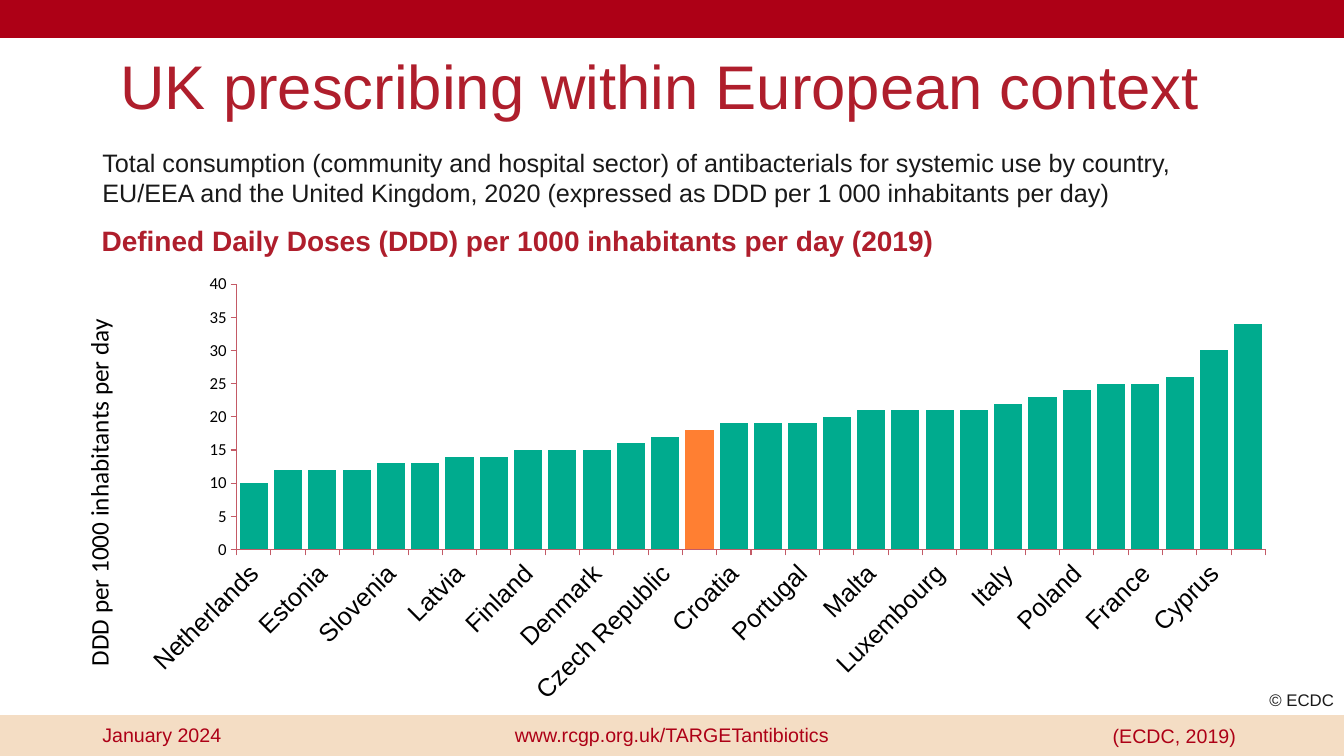
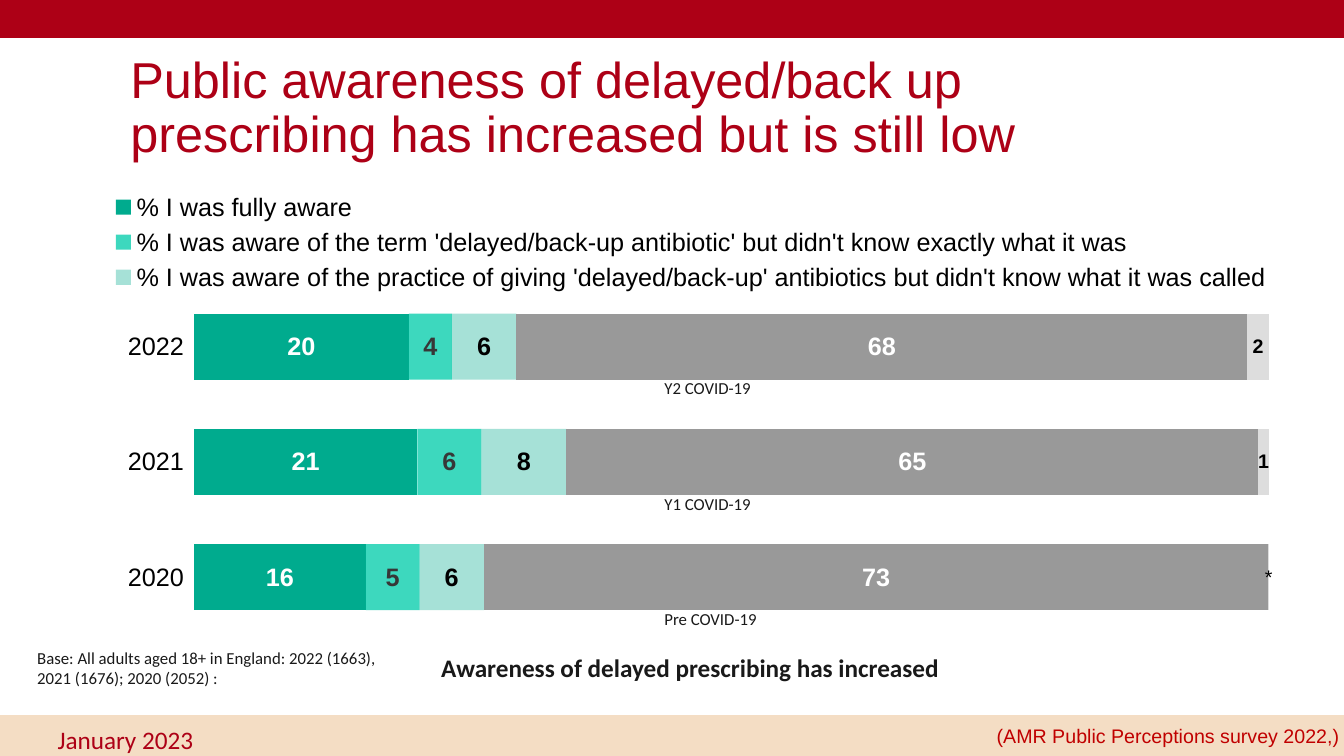
from pptx import Presentation
from pptx.chart.data import CategoryChartData
from pptx.dml.color import RGBColor
from pptx.enum.chart import XL_CHART_TYPE, XL_LABEL_POSITION, XL_LEGEND_POSITION, XL_TICK_MARK
from pptx.enum.shapes import MSO_SHAPE
from pptx.enum.text import MSO_ANCHOR, PP_ALIGN
from pptx.oxml import parse_xml
from pptx.oxml.ns import nsdecls
from pptx.util import Pt

COLUMN, STACKED = XL_CHART_TYPE.COLUMN_CLUSTERED, XL_CHART_TYPE.BAR_STACKED_100
INSIDE, ABOVE, OUT = XL_LABEL_POSITION.CENTER, XL_LEGEND_POSITION.TOP, XL_TICK_MARK.OUTSIDE
MID, TOP, LOW = MSO_ANCHOR.MIDDLE, MSO_ANCHOR.TOP, MSO_ANCHOR.BOTTOM
LEFT, CENTER, RIGHT = PP_ALIGN.LEFT, PP_ALIGN.CENTER, PP_ALIGN.RIGHT
RECT = MSO_SHAPE.RECTANGLE
RED, ROSE, SAND, INK, BLACK = "AD0016", "AF1E2C", "F4DDC4", "191919", "000000"
TEAL, ORANGE, AXIS = "00AB8E", "FF7F32", "C45A66"


def paint(target, color):
    if hasattr(target, "solid"):
        target.solid()
        target.fore_color.rgb = RGBColor.from_string(color)
    else:
        target.color.rgb = RGBColor.from_string(color)


def write(slide, text, spot, size, color, face="Arial", bold=False,
          align=LEFT, anchor=TOP, space=1.0):
    frame = slide.shapes.add_textbox(*map(Pt, spot)).text_frame
    frame.word_wrap = True
    frame.vertical_anchor = anchor
    par = frame.paragraphs[0]
    par.alignment = align
    par.line_spacing = space
    run = par.add_run()
    run.text = text
    run.font.name, run.font.size, run.font.bold = face, Pt(size), bold
    paint(run.font, color)


deck = Presentation()
deck.slide_width, deck.slide_height = Pt(960), Pt(540)
heads = [
    ("UK prescribing within European context", (79, 26.5, 842, 75), 44, ROSE),
    ("Public awareness of delayed/back up prescribing has increased but is still low",
     (86, 28.5, 706, 99), 36, RED),
]
for title, spot, size, color in heads:
    slide = deck.slides.add_slide(deck.slide_layouts[6])
    for top, high, fill in [(511, 29, SAND), (-0.5, 27, RED)]:
        band = slide.shapes.add_shape(RECT, Pt(0), Pt(top), Pt(960), Pt(high))
        band.shadow.inherit = False
        paint(band.fill, fill)
        paint(band.line, fill)
        band.line.width = Pt(1)
    write(slide, title, spot, size, color, anchor=MID, space=0.9)
usage, aware = deck.slides

write(usage, "Total consumption (community and hospital sector) of antibacterials for systemic use "
      "by country, EU/EEA and the United Kingdom, 2020 (expressed as DDD per 1 000 inhabitants per day)",
      (66, 77, 804, 75), 18, INK, anchor=LOW)
write(usage, "Defined Daily Doses (DDD) per 1000 inhabitants per day (2019)",
      (65.5, 158.5, 828, 32), 20, ROSE, bold=True, space=0.9)

doses = [
    ("Netherlands", 10), ("Austria", 12), ("Estonia", 12), ("Sweden", 12), ("Slovenia", 13),
    ("Slovakia", 13), ("Latvia", 14), ("Hungary", 14), ("Finland", 15), ("Norway", 15),
    ("Denmark", 15), ("Lithuania", 16), ("Czech Republic", 17), ("United Kingdom", 18),
    ("Croatia", 19), ("Iceland", 19), ("Portugal", 19), ("EU/EEA", 20), ("Malta", 21),
    ("Bulgaria", 21), ("Luxembourg", 21), ("Belgium", 21), ("Italy", 22), ("Ireland", 23),
    ("Poland", 24), ("Spain", 25), ("France", 25), ("Romania", 26), ("Cyprus", 30), ("Greece", 34),
]
lands, rates = zip(*doses)
data = CategoryChartData()
data.categories = lands
data.add_series("Series 1", rates)
dosespot = (42.5, 189.5, 878, 324)
dosechart = usage.shapes.add_chart(COLUMN, *map(Pt, dosespot), data).chart
doseplot = dosechart.plots[0]
doseplot.gap_width = 22
bars = doseplot.series[0]
paint(bars.format.fill, TEAL)
paint(bars.points[lands.index("United Kingdom")].format.fill, ORANGE)

data = CategoryChartData()
data.categories = ["2022", "2021", "2020"]
parts = [
    ("% I was fully aware", (20, 21, 16), TEAL, 100, "FFFFFF", 18),
    ("% I was aware of the term 'delayed/back-up antibiotic' but didn't know exactly what it was",
     (4, 6, 5), "00CCAA", 76, "373737", 18),
    ("% I was aware of the practice of giving 'delayed/back-up' antibiotics "
     "but didn't know what it was called", (6, 8, 6), TEAL, 35, BLACK, 18),
    ("% I was not aware", (68, 65, 73), "999999", 100, "FFFFFF", 18),
    ("% Don't know", (2, 1, 0.05), "DDDDDD", 100, BLACK, 14),
]
for name, shares, *style in parts:
    data.add_series(name, shares)
barspot = (44.5, 128, 876, 343)
barchart = aware.shapes.add_chart(STACKED, *map(Pt, barspot), data).chart
barplot = barchart.plots[0]
barplot.gap_width, barplot.overlap = 75, 100

for chart in (dosechart, barchart):
    chart.has_title = False
    chart.has_legend = chart is barchart
    chart.font.name, chart.font.size = "Calibri", Pt(12)
    paint(chart.font, BLACK)
    chart.plots[0].vary_by_categories = False
    chart.value_axis.has_major_gridlines = False
    chart.category_axis.major_tick_mark = OUT
    font = chart.category_axis.tick_labels.font
    font.name, font.size = "Arial", Pt(18)
    paint(font, BLACK)

scale = dosechart.value_axis
scale.major_tick_mark = OUT
scale.minimum_scale, scale.maximum_scale, scale.major_unit = 0, 40, 5
for axis in (dosechart.category_axis, scale):
    paint(axis.format.line, AXIS)
    axis.format.line.width = Pt(0.75)
run = scale.axis_title.text_frame.paragraphs[0].add_run()
run.text = "DDD per 1000 inhabitants per day"
run.font.name, run.font.size, run.font.bold = "Calibri", Pt(18), False
paint(run.font, BLACK)
root = dosechart.element
root.xpath(".//c:catAx/c:txPr/a:bodyPr")[0].set("rot", "-2700000")
turn = root.xpath(".//c:valAx/c:title//a:bodyPr")[0]
turn.set("rot", "-5400000")
turn.set("vert", "horz")

years = barchart.category_axis
years.reverse_order = True
years.format.line.fill.background()
barchart.value_axis.visible = False
for part, (name, shares, fill, alpha, color, size) in zip(barplot.series, parts):
    paint(part.format.fill, fill)
    if alpha < 100:
        shade = part.format.fill._xPr.xpath("./a:solidFill/a:srgbClr")[0]
        shade.append(parse_xml(f'<a:alpha {nsdecls("a")} val="{alpha * 1000}"/>'))
    labels = part.data_labels
    labels.show_value = True
    labels.position = INSIDE
    labels.font.name, labels.font.size, labels.font.bold = "Arial", Pt(size), True
    paint(labels.font, color)
run = part.points[2].data_label.text_frame.paragraphs[0].add_run()
run.text = "*"
run.font.name, run.font.size, run.font.bold = "Arial", Pt(14), False
paint(run.font, BLACK)

legend = barchart.legend
legend.position = ABOVE
legend.include_in_layout = False
legend.font.name, legend.font.size = "Arial", Pt(18)
paint(legend.font, BLACK)
key = barchart.element.xpath(".//c:legend")[0]
for index in (0, 1):
    key.insert(index + 1, parse_xml(
        f'<c:legendEntry {nsdecls("c")}><c:idx val="{index}"/><c:delete val="1"/></c:legendEntry>'))

places = [
    (root.xpath(".//c:plotArea")[0], 0, "inner", dosespot, (126.5, 13.5, 735, 189.5)),
    (root.xpath(".//c:valAx/c:title")[0], 1, "", dosespot, (12.5, 35)),
    (barchart.element.xpath(".//c:plotArea")[0], 0, "inner", barspot, (94, 78.5, 768, 247)),
    (key, 3, "", barspot, (33, 5, 832, 80)),
]
for node, index, target, spot, sizes in places:
    for old in node.xpath("./c:layout"):
        node.remove(old)
    rules = f'<c:layoutTarget val="{target}"/>' if target else ""
    rules += '<c:xMode val="edge"/><c:yMode val="edge"/>'
    for side, size, full in zip("xywh", sizes, spot[2:] * 2):
        rules += f'<c:{side} val="{size / full:.4f}"/>'
    node.insert(index, parse_xml(
        f'<c:layout {nsdecls("c")}><c:manualLayout>{rules}</c:manualLayout></c:layout>'))

write(usage, "© ECDC", (860, 489, 100, 22), 12, INK, align=RIGHT)
write(usage, "www.rcgp.org.uk/TARGETantibiotics", (318, 513, 324, 26), 14, RED, align=CENTER)
write(usage, "January 2024", (66, 513, 216, 26), 14, RED)
write(usage, "(ECDC, 2019)", (772.5, 513.5, 117.5, 24), 14, RED, align=RIGHT)

for row, phase in enumerate(("Y2", "Y1", "Pre")):
    write(aware, f"{phase} COVID-19", (467.5, 266.5 + row * 82.5, 94, 22), 12, INK, "Calibri")
write(aware, "Awareness of delayed prescribing has increased",
      (212, 462.5, 562, 29), 18, INK, "Calibri", True, CENTER)
write(aware, "Base: All adults aged 18+ in England: 2022 (1663), 2021 (1676); 2020 (2052) :",
      (19.5, 459, 268.5, 36), 12, INK, "Calibri")
write(aware, "January 2023", (34, 513.5, 480, 29), 18, RED, "Calibri")
write(aware, "(AMR Public Perceptions survey 2022,)", (590, 513.5, 374, 24), 14, "C00000", align=RIGHT)

deck.save("out.pptx")
